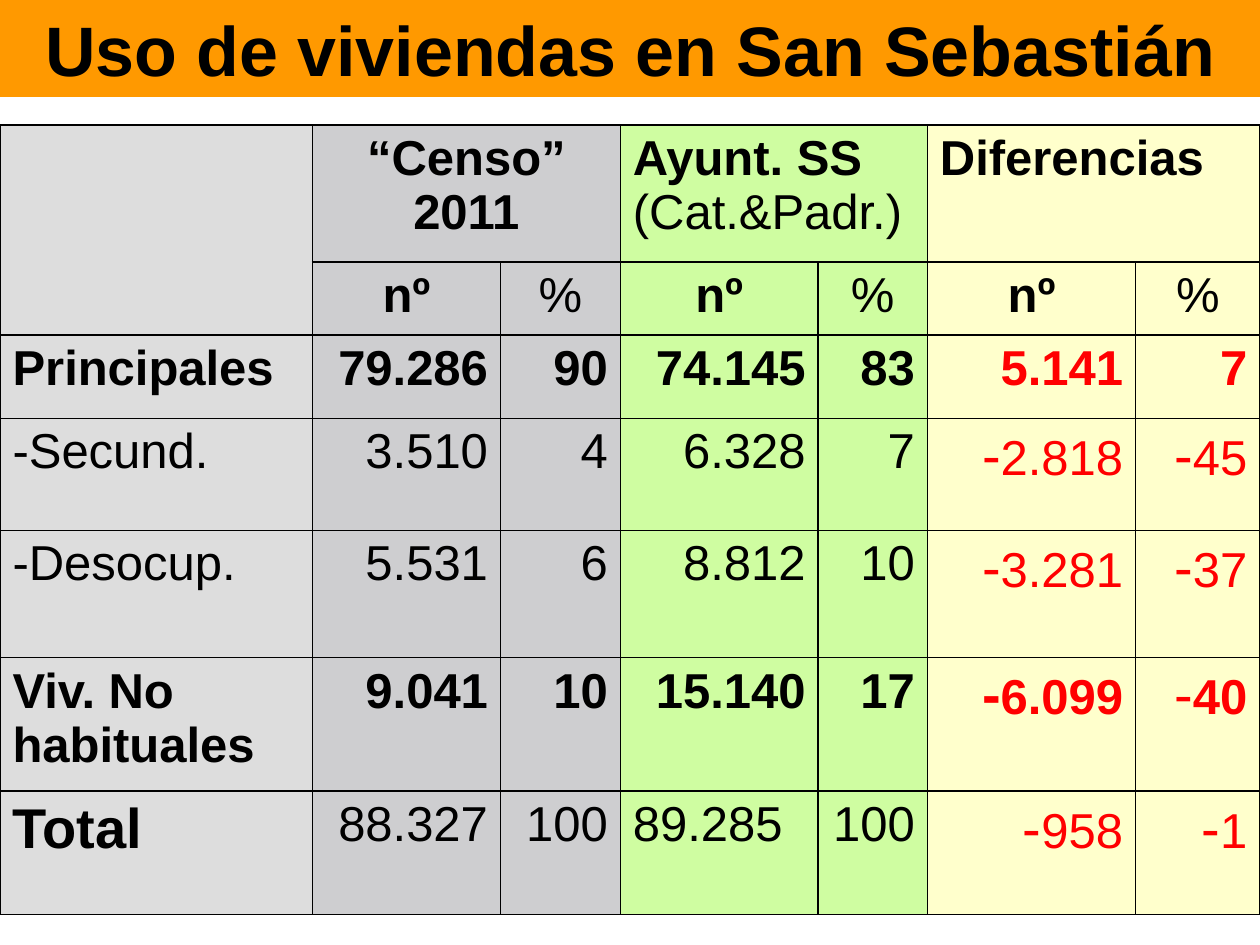
import pptx
import pptx.dml.color
import pptx.enum.text
import pptx.oxml
import pptx.oxml.ns
import pptx.util

Pt = pptx.util.Pt
ALIGN = pptx.enum.text.PP_ALIGN
BLACK, RED, ORANGE = "000000", "FF0000", "FF9900"
GRAY, CENSUS, COUNCIL, DIFFERENCE = "DDDDDD", "CECED0", "CFFDA1", "FFFFCC"
COLUMN_FILLS = [GRAY, CENSUS, CENSUS, COUNCIL, COUNCIL, DIFFERENCE, DIFFERENCE]
COLUMN_WIDTHS = [178.5, 107.5, 68.5, 113, 62.5, 119, 71]
ROW_HEIGHTS = [78.5, 41.8, 47.5, 64, 72.7, 76.3, 70.6]
DATA = [
    ["Principales", "79.286", "90", "74.145", "83", "5.141", "7"],
    ["-Secund.", "3.510", "4", "6.328", "7", "-2.818", "-45"],
    ["-Desocup.", "5.531", "6", "8.812", "10", "-3.281", "-37"],
    ["Viv. No habituales", "9.041", "10", "15.140", "17", "-6.099", "-40"],
    ["Total", "88.327", "100", "89.285", "100", "-958", "-1"],
]
BOLD_LABELS = ("Principales", "Viv. No habituales")


def set_fill(target, color):
    """Give a shape or cell a solid fill."""
    target.fill.solid()
    target.fill.fore_color.rgb = pptx.dml.color.RGBColor.from_string(color)


def format_run(run, size=28, color=BLACK, bold=False):
    """Set the font of a run."""
    run.font.name = "Arial"
    run.font.size = Pt(size)
    run.font.bold = bold
    run.font.color.rgb = pptx.dml.color.RGBColor.from_string(color)


def write_cell(cell, pieces, alignment=ALIGN.LEFT):
    """Write pieces of text, each with its own font settings, in a cell."""
    paragraph = cell.text_frame.paragraphs[0]
    paragraph.alignment = alignment
    for text, settings in pieces:
        run = paragraph.add_run()
        run.text = text
        format_run(run, **settings)


def set_borders(cell):
    """Draw a thin black line on every side of a cell."""
    properties = cell._tc.get_or_add_tcPr()
    for index, side in enumerate(("lnL", "lnR", "lnT", "lnB")):
        line = pptx.oxml.parse_xml(
            f'<a:{side} {pptx.oxml.ns.nsdecls("a")} w="{Pt(1)}"><a:solidFill>'
            f'<a:srgbClr val="{BLACK}"/></a:solidFill></a:{side}>')
        properties.insert(index, line)


def add_title(slide):
    """Fill the title placeholder as a band across the top."""
    title = slide.shapes.title
    title.left, title.top, title.width, title.height = Pt(0), Pt(0), Pt(720), Pt(55.4)
    set_fill(title, ORANGE)
    text_frame = title.text_frame
    text_frame.text = "Uso de viviendas en San Sebastián"
    text_frame.word_wrap = True
    text_frame.auto_size = pptx.enum.text.MSO_AUTO_SIZE.NONE
    text_frame.vertical_anchor = pptx.enum.text.MSO_ANCHOR.MIDDLE
    paragraph = text_frame.paragraphs[0]
    paragraph.alignment = ALIGN.CENTER
    format_run(paragraph.runs[0], size=40, bold=True)


def add_grid(slide):
    """Add the empty table with its sizes, fills and borders."""
    frame = slide.shapes.add_table(len(ROW_HEIGHTS), len(COLUMN_WIDTHS),
                                   Pt(0), Pt(71.3), Pt(720), Pt(sum(ROW_HEIGHTS)))
    table = frame.table
    table.first_row = table.horz_banding = False
    for column, width in zip(table.columns, COLUMN_WIDTHS):
        column.width = Pt(width)
    for row, height in zip(table.rows, ROW_HEIGHTS):
        row.height = Pt(height)
        for cell, color in zip(row.cells, COLUMN_FILLS):
            set_fill(cell, color)
            set_borders(cell)
    return table


def fill_headings(table):
    """Merge and write the two heading rows."""
    bold = {"bold": True}
    headings = [
        ([("“Censo” 2011", bold)], ALIGN.CENTER),
        ([("Ayunt. SS ", bold), ("(Cat.&Padr.)", {})], ALIGN.LEFT),
        ([("Diferencias", bold)], ALIGN.LEFT),
    ]
    table.cell(0, 0).merge(table.cell(1, 0))
    for column, (pieces, alignment) in zip((1, 3, 5), headings):
        table.cell(0, column).merge(table.cell(0, column + 1))
        write_cell(table.cell(0, column), pieces, alignment)
        write_cell(table.cell(1, column), [("nº", bold)], ALIGN.CENTER)
        write_cell(table.cell(1, column + 1), [("%", {})], ALIGN.CENTER)


def fill_row(table, row, values):
    """Write one row of data, with the differences in red."""
    label = values[0]
    bold = label in BOLD_LABELS
    total = label == "Total"
    write_cell(table.cell(row, 0),
               [(label, {"size": 32 if total else 28, "bold": bold or total})])
    for column, value in enumerate(values[1:], 1):
        color = RED if column >= 5 else BLACK
        pieces = [(value.lstrip("-"), {"color": color, "bold": bold})]
        if value.startswith("-"):
            sign = {"size": 32, "color": color, "bold": bold and column == 5}
            pieces.insert(0, ("-", sign))
        alignment = ALIGN.LEFT if total and column == 3 else ALIGN.RIGHT
        write_cell(table.cell(row, column), pieces, alignment)


def main():
    """Build and save the presentation."""
    presentation = pptx.Presentation()
    presentation.slide_width, presentation.slide_height = Pt(720), Pt(540)
    slide = presentation.slides.add_slide(presentation.slide_layouts[5])
    add_title(slide)
    table = add_grid(slide)
    fill_headings(table)
    for row, values in enumerate(DATA, 2):
        fill_row(table, row, values)
    presentation.save("out.pptx")


if __name__ == "__main__":
    main()
